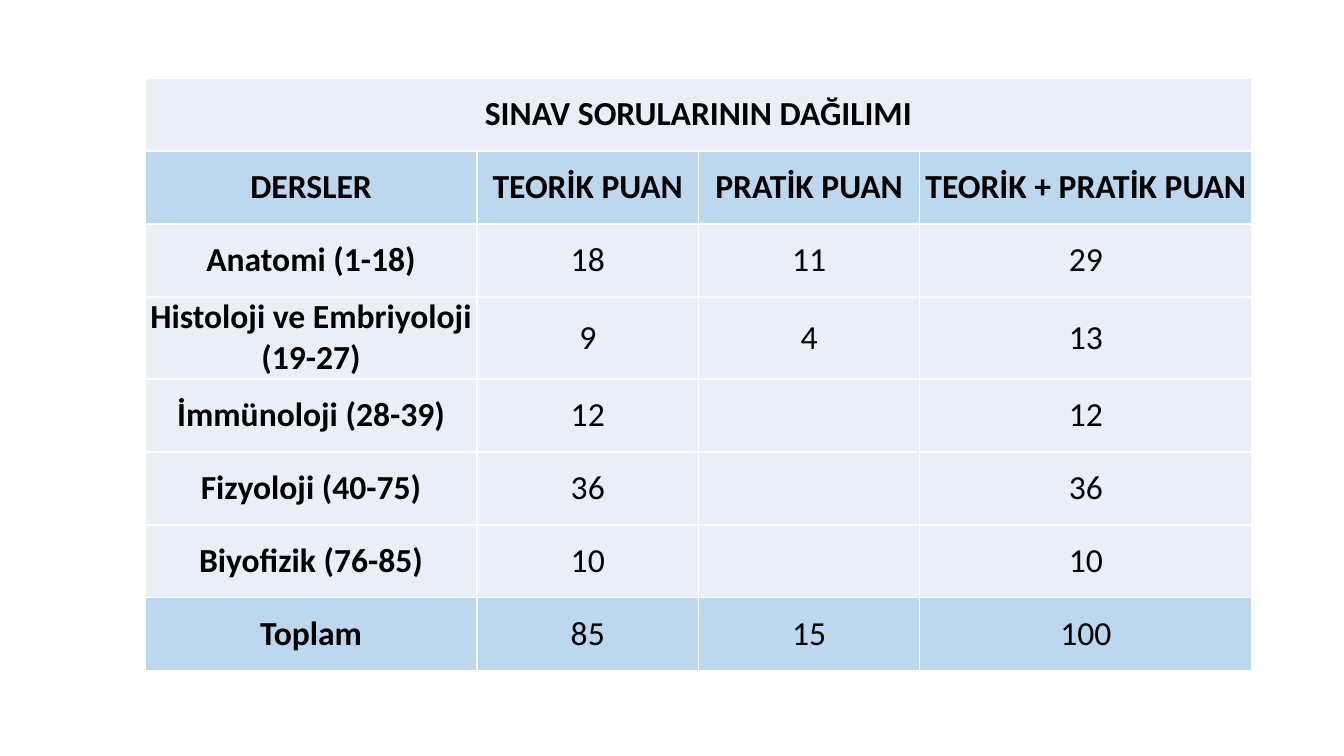
from lxml.etree import SubElement
from pptx import Presentation
from pptx.dml.color import RGBColor
from pptx.enum.text import MSO_ANCHOR, PP_ALIGN
from pptx.oxml.ns import qn
from pptx.util import Emu, Pt

PALE = RGBColor(0xEA, 0xEF, 0xF7)
BLUE = RGBColor(0xBD, 0xD7, 0xEE)
BLACK = RGBColor(0, 0, 0)
WHITE = RGBColor(0xFF, 0xFF, 0xFF)

ROWS = [
    ("SINAV SORULARININ DAĞILIMI", "", "", ""),
    ("DERSLER", "TEORİK PUAN", "PRATİK PUAN", "TEORİK + PRATİK PUAN"),
    ("Anatomi (1-18)", "18", "11", "29"),
    ("Histoloji ve Embriyoloji (19-27)", "9", "4", "13"),
    ("İmmünoloji (28-39)", "12", "", "12"),
    ("Fizyoloji (40-75)", "36", "", "36"),
    ("Biyofizik (76-85)", "10", "", "10"),
    ("Toplam", "85", "15", "100"),
]
HEADER_ROWS = 2
BLUE_ROWS = (1, len(ROWS) - 1)
COLUMN_SHARES = (3, 2, 2, 3)


def px(length):
    return Emu(round(length * 914400 / 100.8))


def add_borders(cell):
    properties = cell._tc.get_or_add_tcPr()
    for side in ("a:lnL", "a:lnR", "a:lnT", "a:lnB"):
        line = SubElement(properties, qn(side), w=str(Pt(1)))
        fill = SubElement(line, qn("a:solidFill"))
        SubElement(fill, qn("a:srgbClr"), val=str(WHITE))


def style_cell(cell, text, fill, bold):
    # Borders must precede the fill in the cell's XML.
    add_borders(cell)
    cell.fill.solid()
    cell.fill.fore_color.rgb = fill
    cell.vertical_anchor = MSO_ANCHOR.MIDDLE
    cell.margin_left = cell.margin_right = cell.margin_top = cell.margin_bottom = 0
    if not text:
        return
    cell.text_frame.text = text
    para = cell.text_frame.paragraphs[0]
    para.alignment = PP_ALIGN.CENTER
    font = para.runs[0].font
    font.name = "Calibri"
    font.size = Pt(24)
    font.bold = bold
    font.color.rgb = BLACK


def add_score_table(page, left, top, width, height):
    frame = page.shapes.add_table(len(ROWS), len(COLUMN_SHARES),
                                  px(left), px(top), px(width), px(height))
    table = frame.table
    for column, share in zip(table.columns, COLUMN_SHARES):
        column.width = px(width * share / sum(COLUMN_SHARES))
    for row_index, texts in enumerate(ROWS):
        table.rows[row_index].height = px(height / len(ROWS))
        fill = BLUE if row_index in BLUE_ROWS else PALE
        for column_index, text in enumerate(texts):
            bold = row_index < HEADER_ROWS or column_index == 0
            style_cell(table.cell(row_index, column_index), text, fill, bold)
    table.cell(0, 0).merge(table.cell(0, len(COLUMN_SHARES) - 1))


def main():
    deck = Presentation()
    deck.slide_width, deck.slide_height = px(1344), px(756)
    page = deck.slides.add_slide(deck.slide_layouts[6])
    add_score_table(page, left=145, top=78, width=1107, height=584)
    deck.save("out.pptx")


if __name__ == "__main__":
    main()
